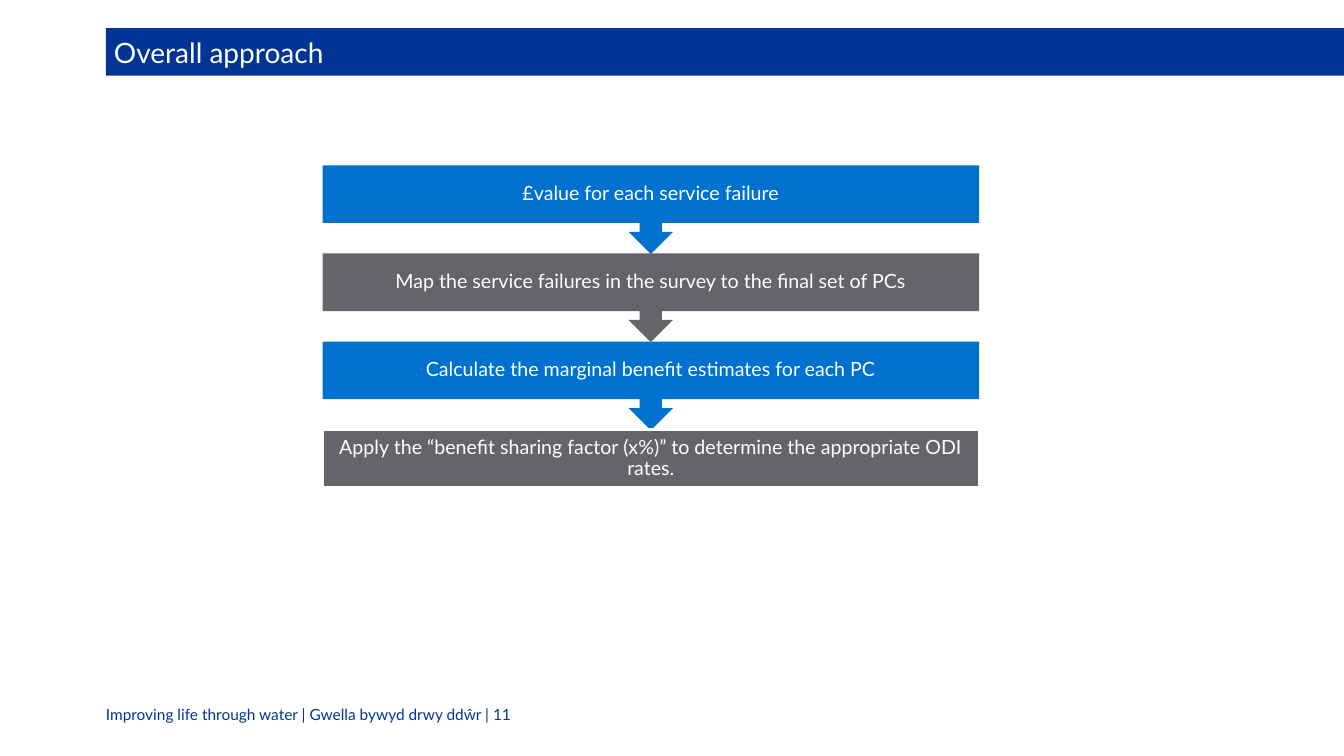
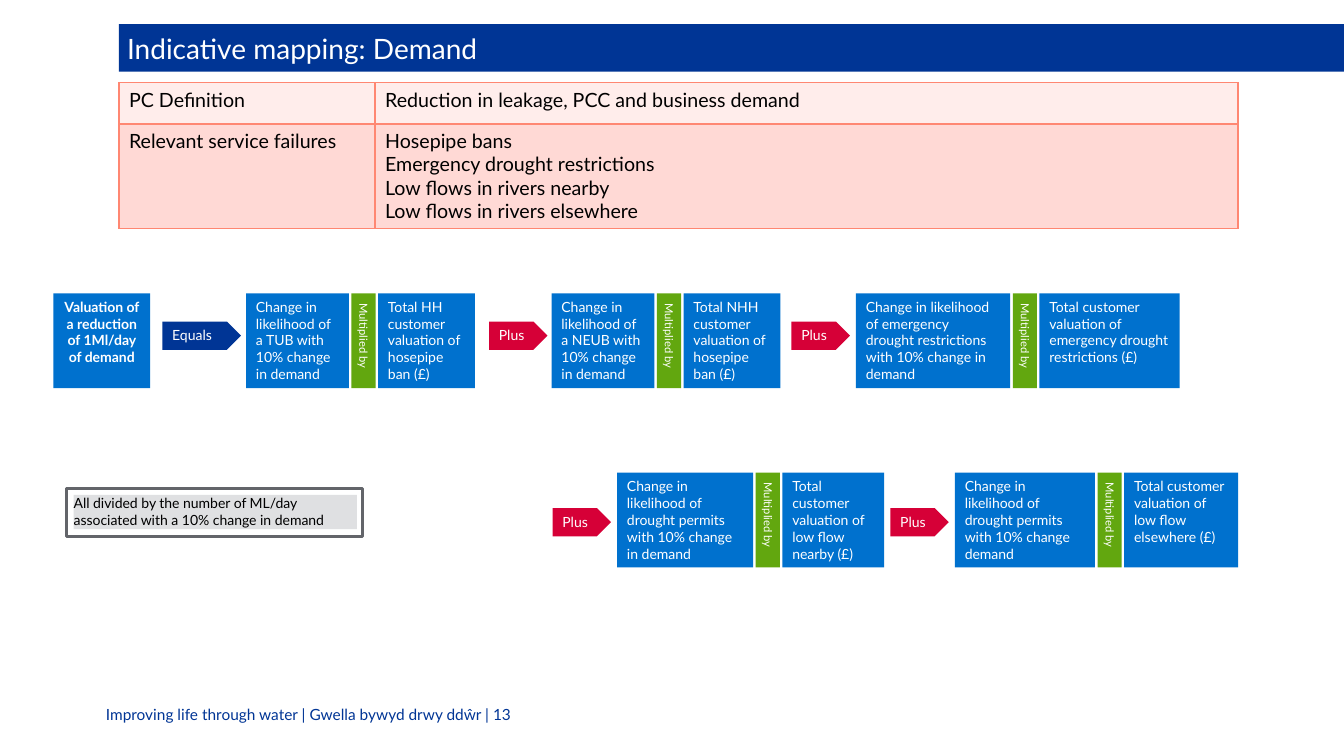
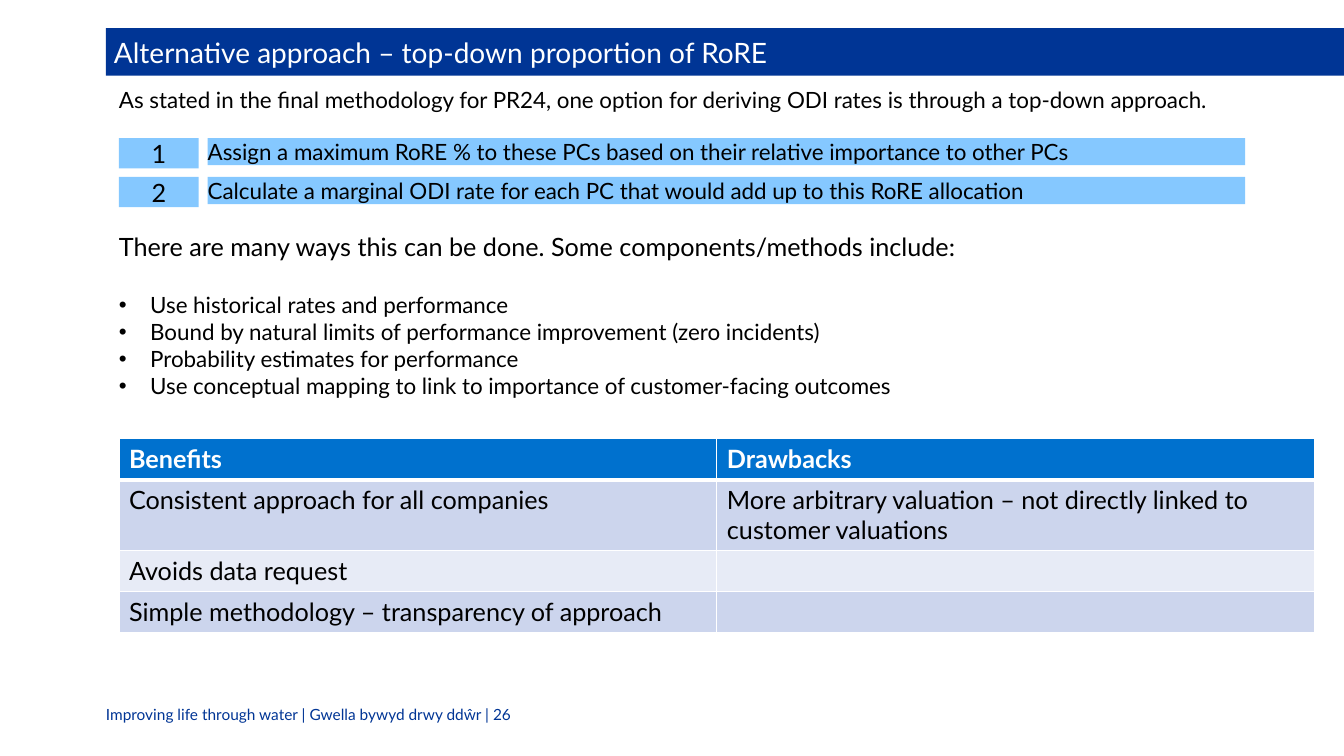
from lxml import etree
from pptx import Presentation
from pptx.dml.color import RGBColor
from pptx.enum.shapes import MSO_SHAPE
from pptx.enum.text import MSO_ANCHOR, MSO_AUTO_SIZE, PP_ALIGN
from pptx.oxml.ns import qn
from pptx.util import Inches, Pt

RECT, PENTAGON = MSO_SHAPE.RECTANGLE, MSO_SHAPE.PENTAGON
CALLOUT = MSO_SHAPE.DOWN_ARROW_CALLOUT
LEFT, CENTER = PP_ALIGN.LEFT, PP_ALIGN.CENTER
TOP, MIDDLE = MSO_ANCHOR.TOP, MSO_ANCHOR.MIDDLE
TITLE_AND_BODY, TITLE_ONLY = 1, 5

# Theme
W, H = 13.33, 7.5
MARGIN = 1.18
THEME = dict(
    font="Lato",
    navy="003595", blue="0071CE", sky="85C8FF", grey="63656A", pale="DFE0E2",
    green="62A70F", red="D60037", white="FFFFFF", black="000000",
    coral="FF8772", pink=("FFEDEB", "FFD9D5"), bands=("CCD5ED", "E7EBF6"),
    title=20, large=18, body=16, medium=14, footer=11, small=10, tiny=8,
)
T = THEME
FOOTER = "Improving life through water | Gwella bywyd drwy ddŵr | {}"

# Content
STEPS = [
    "£value for each service failure",
    "Map the service failures in the survey to the final set of PCs",
    "Calculate the marginal benefit estimates for each PC",
    "Apply the “benefit sharing factor (x%)” to determine the appropriate ODI rates.",
]

DEFINITION = [
    ["PC Definition", "Reduction in leakage, PCC and business demand"],
    ["Relevant service failures",
     ["Hosepipe bans", "Emergency drought restrictions",
      "Low flows in rivers nearby", "Low flows in rivers elsewhere"]],
]
RESULT = "Valuation of a reduction of 1Ml/day of demand"
DIVISOR = "All divided by the number of ML/day associated with a 10% change in demand"
# Each row: top, tag offset, terms
# Each term: tag, tag left, tag width, pair left, (width, text) of both factors
TERMS = [
    (2.91, 0.28, [
        ("Equals", 1.61, 0.78, 2.44,
         (1.02, "Change in likelihood of a TUB with 10% change in demand"),
         (0.96, "Total HH customer valuation of hosepipe ban (£)")),
        ("Plus", 4.85, 0.58, 5.47,
         (1.02, "Change in likelihood of a NEUB with 10% change in demand"),
         (0.96, "Total NHH customer valuation of hosepipe ban (£)")),
        ("Plus", 7.85, 0.58, 8.49,
         (1.53, "Change in likelihood of emergency drought restrictions "
                "with 10% change in demand"),
         (1.39, "Total customer valuation of emergency drought restrictions (£)")),
    ]),
    (4.69, 0.35, [
        ("Plus", 5.48, 0.58, 6.12,
         (1.35, "Change in likelihood of drought permits with 10% change in demand"),
         (1.01, "Total customer valuation of low flow nearby (£)")),
        ("Plus", 8.83, 0.58, 9.47,
         (1.39, "Change in likelihood of drought permits with 10% change demand"),
         (1.13, "Total customer valuation of low flow elsewhere (£)")),
    ]),
]

INTRO = ("As stated in the final methodology for PR24, one option for deriving "
         "ODI rates is through a top-down approach.")
ACTIONS = [
    "Assign a maximum RoRE % to these PCs based on their relative importance to other PCs",
    "Calculate a marginal ODI rate for each PC that would add up to this RoRE allocation",
]
METHODS_LEAD = "There are many ways this can be done. Some components/methods include:"
METHODS = [
    "Use historical rates and performance",
    "Bound by natural limits of performance improvement (zero incidents)",
    "Probability estimates for performance",
    "Use conceptual mapping to link to importance of customer-facing outcomes",
]
PROS_CONS = [
    ["Benefits", "Drawbacks"],
    ["Consistent approach for all companies",
     "More arbitrary valuation – not directly linked to customer valuations"],
    ["Avoids data request", ""],
    ["Simple methodology – transparency of approach", ""],
]


# Helpers
def rgb(color):
    return RGBColor.from_string(color)


def style(p, size, color="black", bold=False, align=LEFT, spacing=None):
    p.alignment = align
    p.space_before = p.space_after = Pt(0)
    if spacing:
        p.line_spacing = spacing
    p.font.name, p.font.size, p.font.bold = T["font"], Pt(size), bold
    p.font.color.rgb = rgb(T[color])


def write(tf, text, anchor=TOP, insets=(0.1, 0.05, 0.1, 0.05), **fmt):
    """Fill a text frame with one paragraph, or one for each list item."""
    tf.word_wrap = True
    tf.auto_size = MSO_AUTO_SIZE.NONE
    tf.vertical_anchor = anchor
    (tf.margin_left, tf.margin_top,
     tf.margin_right, tf.margin_bottom) = map(Inches, insets)
    lines = [text] if isinstance(text, str) else text
    for i, line in enumerate(lines):
        p = tf.add_paragraph() if i else tf.paragraphs[0]
        p.add_run().text = line
        style(p, **fmt)


def place(sp, x, y, w, h):
    sp.left, sp.top, sp.width, sp.height = map(Inches, (x, y, w, h))


def add_text(s, box, text, **fmt):
    sp = s.shapes.add_textbox(*map(Inches, box))
    write(sp.text_frame, text, **fmt)


def add_box(s, box, fill=None, text=None, kind=RECT, line=None, **fmt):
    sp = s.shapes.add_shape(kind, *map(Inches, box))
    sp.shadow.inherit = False
    if fill:
        sp.fill.solid()
        sp.fill.fore_color.rgb = rgb(T[fill])
    else:
        sp.fill.background()
    if line:
        sp.line.color.rgb, sp.line.width = rgb(T[line]), Pt(2)
    else:
        sp.line.fill.background()
    if text:
        write(sp.text_frame, text, **fmt)
    return sp


def border(cell, color, widths):
    """Draw the left, right, top and bottom borders of a cell."""
    tc_pr = cell._tc.get_or_add_tcPr()
    for i, (side, width) in enumerate(zip("LRTB", widths)):
        ln = etree.Element(qn("a:ln" + side), w=str(Pt(width)))
        fill = etree.SubElement(ln, qn("a:solidFill"))
        etree.SubElement(fill, qn("a:srgbClr"), val=color)
        tc_pr.insert(i, ln)


def add_grid(s, x, y, cols, rows, data, fills, line, size, header=False):
    frame = s.shapes.add_table(len(rows), len(cols), *map(
        Inches, (x, y, sum(cols), sum(rows))))
    table = frame.table
    table.first_row = table.horz_banding = False
    for col, w in zip(table.columns, cols):
        col.width = Inches(w)
    for r, (row, h) in enumerate(zip(table.rows, rows)):
        row.height = Inches(h)
        head = header and r == 0
        for cell, text in zip(row.cells, data[r]):
            cell.fill.solid()
            cell.fill.fore_color.rgb = rgb(fills[r])
            border(cell, T[line], (1, 1, 1, 3 if head else 1))
            if text:
                lines = [text] if isinstance(text, str) else text
                cell.text = "\n".join(lines)
                for p in cell.text_frame.paragraphs:
                    style(p, size, "white" if head else "black", head)


def new_slide(prs, title, number, layout=TITLE_ONLY, x=1.05, y=0.28):
    """Start a slide with the title band and the footer."""
    s = prs.slides.add_slide(prs.slide_layouts[layout])
    sp = s.shapes.title
    place(sp, x, y, W - x, 0.47)
    sp.fill.solid()
    sp.fill.fore_color.rgb = rgb(T["navy"])
    write(sp.text_frame, title, anchor=MIDDLE, insets=(0.08, 0.04, 0.39, 0.04),
          size=T["title"], color="white")
    add_text(s, (1.05, 6.99, 6.82, 0.19), FOOTER.format(number), anchor=MIDDLE,
             insets=(0,) * 4, size=T["footer"], color="navy")
    return s


# Slides
def approach_slide(prs):
    s = new_slide(prs, "Overall approach", 11)
    x, y, w, pitch, box_h = 3.2, 1.64, 6.51, 0.874, 0.57
    for i, step in enumerate(STEPS):
        last = i == len(STEPS) - 1
        sp = add_box(s, (x, y + i * pitch, w, box_h if last else 0.88),
                     ("blue", "grey")[i % 2], step, RECT if last else CALLOUT,
                     line="white" if last else None, anchor=MIDDLE,
                     insets=(0.11,) * 4, size=T["medium"], color="white",
                     align=CENTER, spacing=0.9)
        if not last:
            sp.adjustments[3] = 0.65


def demand_slide(prs):
    s = new_slide(prs, "Indicative mapping: Demand", 13, x=MARGIN, y=0.24)
    add_grid(s, MARGIN, 0.82, (2.54, 8.56), (0.41, 1.03), DEFINITION,
             T["pink"], "coral", T["medium"])
    box_h, gap, strip_w = 0.94, 0.29, 0.24
    label = dict(size=T["small"], color="white")
    add_box(s, (0.53, TERMS[0][0], 0.96, box_h), "blue", RESULT,
            bold=True, align=CENTER, **label)
    for top, tag_dy, terms in TERMS:
        for tag, tag_x, tag_w, x, (w1, chance), (w2, value) in terms:
            add_box(s, (tag_x, top + tag_dy, tag_w, 0.28),
                    "navy" if tag == "Equals" else "red", tag, PENTAGON, **label)
            add_box(s, (x, top, w1, box_h), "blue", chance, **label)
            add_box(s, (x + w1 + gap, top, w2, box_h), "blue", value, **label)
            # The strip is turned about its centre, in the middle of the gap
            strip = add_box(s, (x + w1 + (gap - box_h) / 2,
                                top + (box_h - strip_w) / 2, box_h, strip_w),
                            "green", "Multiplied by", size=T["tiny"], color="white")
            strip.rotation = 90
    add_box(s, (0.73, 4.91, 2.81, 0.34), "pale", DIVISOR, insets=(0,) * 4,
            size=T["small"])
    add_box(s, (0.66, 4.85, 2.94, 0.47), line="grey")


def alternative_slide(prs):
    s = new_slide(prs, "Alternative approach – top-down proportion of RoRE", 26,
                  TITLE_AND_BODY)
    width, flush = 11.86, (0,) * 4
    add_text(s, (MARGIN, 0.85, width, 0.27), INTRO, insets=flush, size=T["body"])

    # Numbered actions
    for i, action in enumerate(ACTIONS):
        y = 1.37 + i * 0.385
        add_box(s, (MARGIN, y, 0.79, 0.3), "sky", str(i + 1), insets=flush,
                size=T["large"], align=CENTER)
        add_box(s, (2.06, y, 10.29, 0.27), "sky", action, insets=flush,
                size=T["body"])

    # Methods list
    body = s.placeholders[1]
    place(body, MARGIN, 2.29, width, 1.72)
    write(body.text_frame, [METHODS_LEAD] + METHODS, insets=flush, size=T["body"])
    lead, *bullets = body.text_frame.paragraphs
    for p in (lead, *bullets):
        hang = 0 if p is lead else Inches(0.31)
        p_pr = p._p.get_or_add_pPr()
        p_pr.set("marL", str(hang))
        p_pr.set("indent", str(-hang))
        mark = etree.Element(qn("a:buChar" if hang else "a:buNone"))
        if hang:
            mark.set("char", "•")
        p_pr.insert_element_before(mark, "a:tabLst", "a:defRPr", "a:extLst")
    lead.font.size = Pt(T["large"])
    bullets[0].space_before = Pt(21.6)

    band, light = T["bands"]
    add_grid(s, MARGIN, 4.35, (width / 2,) * 2, (0.41, 0.69, 0.41, 0.41),
             PROS_CONS, (T["blue"], band, light, band), "white", T["large"],
             header=True)


def main():
    prs = Presentation()
    prs.slide_width, prs.slide_height = Inches(W), Inches(H)
    approach_slide(prs)
    demand_slide(prs)
    alternative_slide(prs)
    prs.save("out.pptx")


if __name__ == "__main__":
    main()
